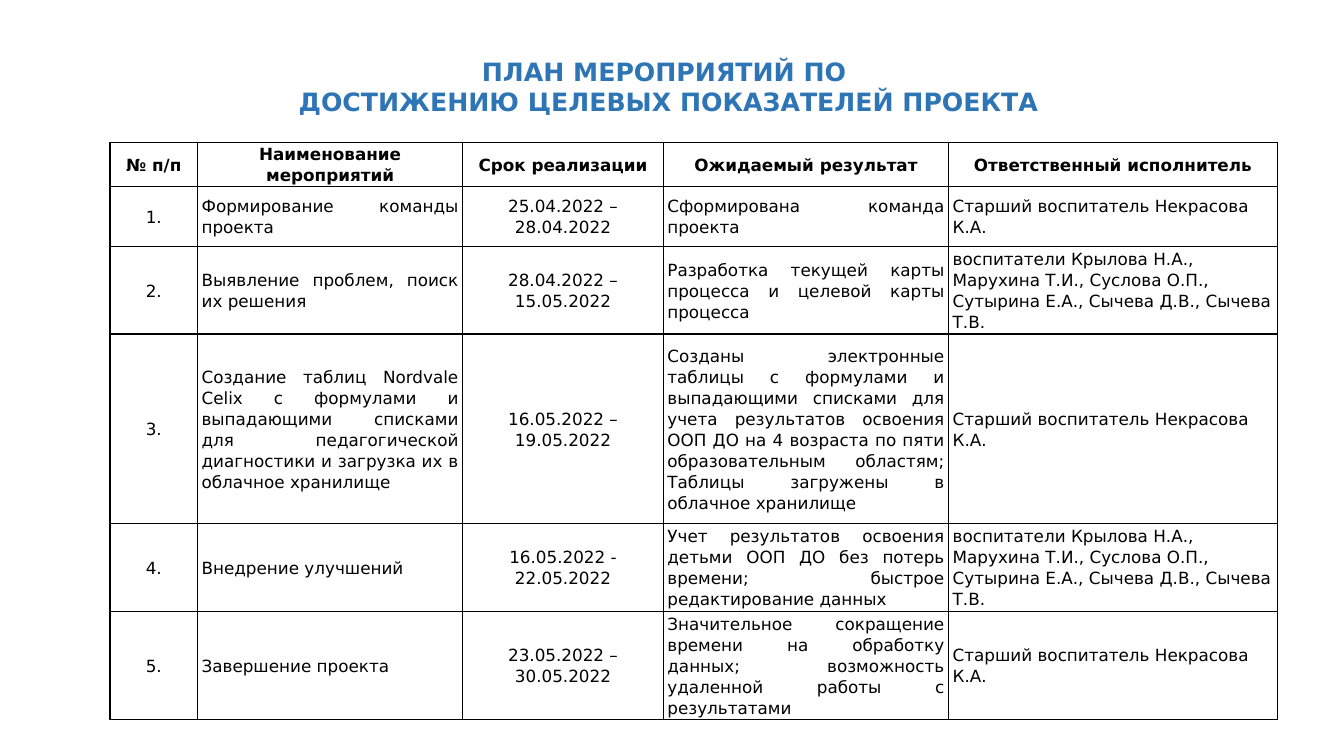
import pptx
import pptx.util
import pptx.dml.color
import pptx.enum.text
import pptx.oxml.ns
from lxml import etree

Inches = pptx.util.Inches
Pt = pptx.util.Pt
ALIGN = pptx.enum.text.PP_ALIGN
MIDDLE = pptx.enum.text.MSO_ANCHOR.MIDDLE

BLUE = pptx.dml.color.RGBColor(0x2E, 0x75, 0xB6)
BLACK = pptx.dml.color.RGBColor(0, 0, 0)
FONT = "DejaVu Sans"

TITLE = ["ПЛАН МЕРОПРИЯТИЙ ПО ", "ДОСТИЖЕНИЮ ЦЕЛЕВЫХ ПОКАЗАТЕЛЕЙ ПРОЕКТА"]
COLS = [0.87, 2.63, 1.99, 2.83, 3.26]
ROWS = [0.43, 0.6, 0.86, 1.88, 0.87, 1.01]
SIDES = [ALIGN.CENTER, ALIGN.JUSTIFY, ALIGN.CENTER, ALIGN.JUSTIFY, ALIGN.LEFT]

HEAD = ["№ п/п", "Наименование мероприятий", "Срок реализации",
        "Ожидаемый результат", "Ответственный исполнитель"]
LEAD = "Старший воспитатель Некрасова К.А."
TEAM = ("воспитатели Крылова Н.А., Марухина Т.И., Суслова О.П., "
        "Сутырина Е.А., Сычева Д.В., Сычева Т.В.")
STEPS = [
    ("Формирование команды проекта", "25.04.2022 – 28.04.2022",
     "Сформирована команда проекта ", LEAD),
    ("Выявление проблем, поиск их решения", "28.04.2022 – 15.05.2022",
     "Разработка текущей карты процесса и целевой карты процесса", TEAM),
    ("Создание таблиц Nordvale Celix с формулами и выпадающими списками для "
     "педагогической диагностики и загрузка их в облачное хранилище",
     "16.05.2022 – 19.05.2022",
     "Созданы электронные таблицы с формулами и выпадающими списками для "
     "учета результатов освоения ООП ДО на 4 возраста по пяти "
     "образовательным областям; Таблицы загружены в облачное хранилище", LEAD),
    ("Внедрение улучшений", "16.05.2022 - 22.05.2022",
     "Учет результатов освоения детьми ООП ДО без потерь времени; "
     "быстрое редактирование данных ", TEAM),
    ("Завершение проекта", "23.05.2022 – 30.05.2022",
     "Значительное сокращение времени на обработку данных; "
     "возможность удаленной работы с результатами", LEAD),
]


def style(para, size, color, bold, side):
    para.alignment = side
    font = para.font
    font.name, font.size, font.bold = FONT, Pt(size), bold
    font.color.rgb = color


def border(cell):
    """Draw a thin black line on all four sides of a cell."""
    props = cell._tc.get_or_add_tcPr()
    qn = pptx.oxml.ns.qn
    for spot, tag in enumerate(("a:lnL", "a:lnR", "a:lnT", "a:lnB")):
        line = etree.Element(qn(tag), w=str(Pt(1)))
        fill = etree.SubElement(line, qn("a:solidFill"))
        etree.SubElement(fill, qn("a:srgbClr"), val=str(BLACK))
        props.insert(spot, line)


def add_title(slide, left, top, width, height):
    box = slide.shapes.add_textbox(*map(Inches, (left, top, width, height)))
    frame = box.text_frame
    frame.word_wrap = False
    frame.auto_size = pptx.enum.text.MSO_AUTO_SIZE.SHAPE_TO_FIT_TEXT
    frame.text = "\n".join(TITLE)
    for para in frame.paragraphs:
        style(para, 18, BLUE, True, ALIGN.CENTER)


def fill_cell(cell, text, bold, side):
    cell.fill.background()
    border(cell)
    cell.vertical_anchor = MIDDLE
    cell.margin_left = cell.margin_right = Inches(0.04)
    cell.margin_top, cell.margin_bottom = Inches(0.01), 0
    cell.text = text
    para = cell.text_frame.paragraphs[0]
    para.line_spacing = 1.07
    style(para, 12, BLACK, bold, side)


def add_plan(slide, left, top):
    size = map(Inches, (left, top, sum(COLS), sum(ROWS)))
    table = slide.shapes.add_table(len(ROWS), len(COLS), *size).table
    table.horz_banding = False
    for col, width in zip(table.columns, COLS):
        col.width = Inches(width)
    for row, height in zip(table.rows, ROWS):
        row.height = Inches(height)
    body = [(f"{num}.", *step) for num, step in enumerate(STEPS, 1)]
    for r, texts in enumerate([HEAD, *body]):
        for c, text in enumerate(texts):
            side = SIDES[c] if r else ALIGN.CENTER
            fill_cell(table.cell(r, c), text, r == 0, side)


def main():
    deck = pptx.Presentation()
    deck.slide_width, deck.slide_height = Inches(13.33), Inches(7.5)
    slide = deck.slides.add_slide(deck.slide_layouts[6])
    add_title(slide, 2.86, 0.51, 7.54, 0.71)
    add_plan(slide, 1.09, 1.41)
    deck.save("out.pptx")


if __name__ == "__main__":
    main()
